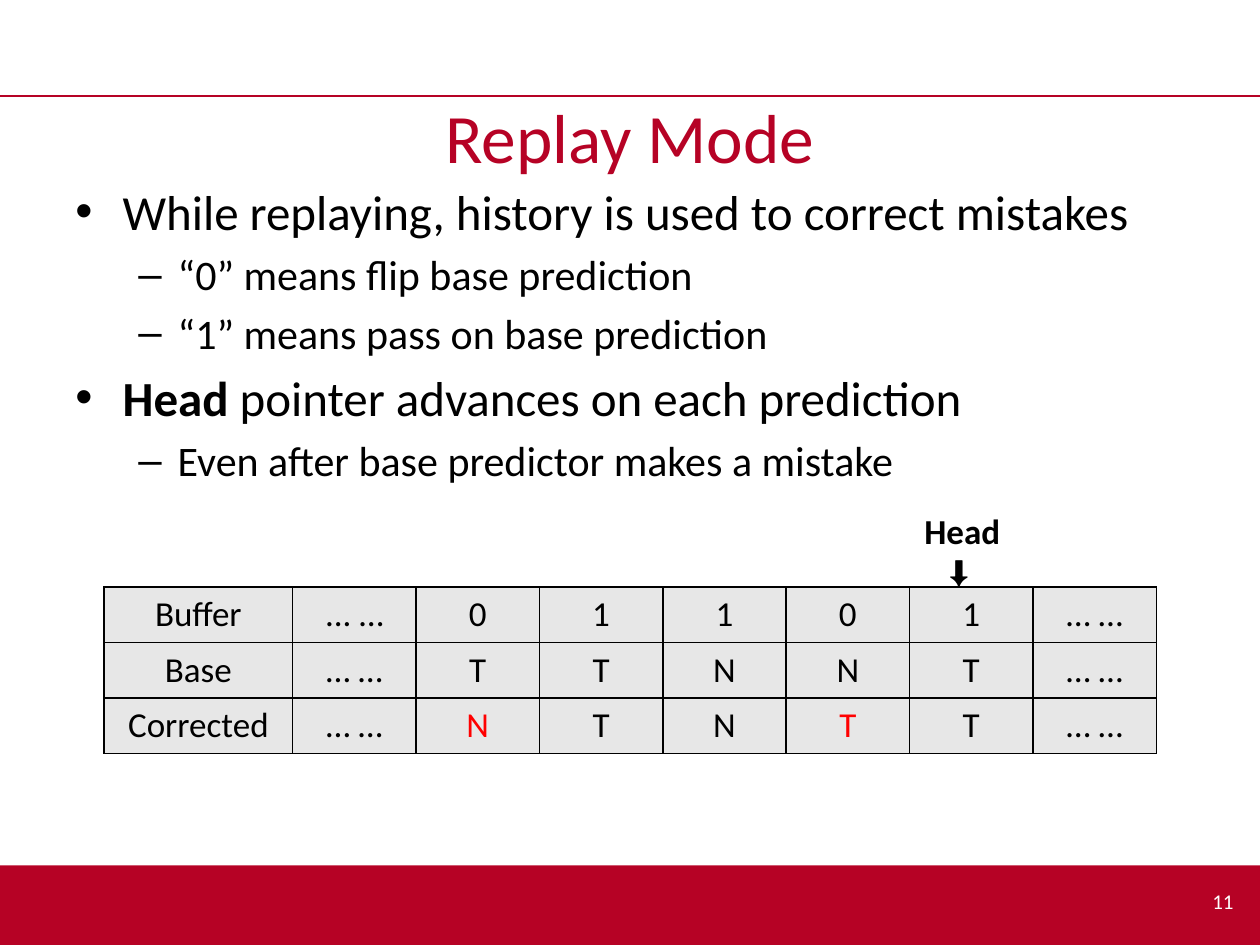
from lxml import etree
from pptx import Presentation
from pptx.dml.color import RGBColor
from pptx.enum.shapes import MSO_CONNECTOR, MSO_SHAPE
from pptx.enum.text import MSO_ANCHOR, PP_ALIGN
from pptx.oxml.ns import qn
from pptx.util import Pt

LEFT, CENTER, RIGHT = PP_ALIGN.LEFT, PP_ALIGN.CENTER, PP_ALIGN.RIGHT
TOP, MIDDLE = MSO_ANCHOR.TOP, MSO_ANCHOR.MIDDLE

# Content
TITLE = "Replay Mode"
BULLETS = [  # level, runs of (text, bold)
    (0, [("While replaying, history is used to correct mistakes", False)]),
    (1, [("“0” means flip base prediction", False)]),
    (1, [("“1” means pass on base prediction", False)]),
    (0, [("Head", True), (" pointer advances on each prediction", False)]),
    (1, [("Even after base predictor makes a mistake", False)]),
]
HISTORY = [
    ["Buffer", "... …", "0", "1", "1", "0", "1", "… …"],
    ["Base", "… …", "T", "T", "N", "N", "T", "… …"],
    ["Corrected", "… …", "N", "T", "N", "T", "T", "… …"],
]
CORRECTED_ROW = 2
PAGE_NUMBER = "11"

# Theme
THEME = {
    "font": "Calibri", "symbol_font": "Arial",
    "red": "B60225", "black": "000000", "white": "FFFFFF",
    "cell": "E7E7E7", "flipped": "FF0000",
    "title": 39.6, "table": 20, "arrow": 18, "number": 12,
}
LEVELS = [  # bullet character, text size, left margin, hanging indent
    ("•", 28, 27, 27),
    ("–", 24, 58.5, 22.5),
]

# Geometry in points
PAGE_WIDTH, PAGE_HEIGHT = 720, 540
RULE_TOP, BAND_HEIGHT = 54.7, 45.4
TABLE_LEFT, TABLE_TOP, ROW_HEIGHT = 59.5, 335.4, 31.7
LABEL_WIDTH, VALUE_WIDTH = 107.75, 70.5


def color(name):
    return RGBColor.from_string(THEME[name])


def add_span(para, text, size, ink="black", bold=False, font="font"):
    span = para.add_run()
    span.text = text
    span.font.name = THEME[font]
    span.font.size = Pt(size)
    span.font.bold = bold
    span.font.color.rgb = color(ink)


def add_box(page, left, top, width, height, anchor=TOP, wrap=True):
    box = page.shapes.add_textbox(Pt(left), Pt(top), Pt(width), Pt(height))
    frame = box.text_frame
    frame.word_wrap = wrap
    frame.vertical_anchor = anchor
    return frame


def add_label(page, place, text, size, align, anchor=TOP, wrap=True, **style):
    para = add_box(page, *place, anchor, wrap).paragraphs[0]
    para.alignment = align
    add_span(para, text, size, **style)


def add_frame_lines(page):
    band = page.shapes.add_shape(
        MSO_SHAPE.RECTANGLE, 0, Pt(PAGE_HEIGHT - BAND_HEIGHT), Pt(PAGE_WIDTH), Pt(BAND_HEIGHT))
    band.shadow.inherit = False
    band.fill.solid()
    band.fill.fore_color.rgb = color("red")
    band.line.fill.background()
    rule = page.shapes.add_connector(
        MSO_CONNECTOR.STRAIGHT, 0, Pt(RULE_TOP), Pt(PAGE_WIDTH), Pt(RULE_TOP))
    rule.line.color.rgb = color("red")
    rule.line.width = Pt(1)
    etree.SubElement(rule._element.spPr, qn("a:effectLst"))


def add_title(page):
    title = page.shapes.title
    title.left, title.top = 0, Pt(RULE_TOP)
    title.width, title.height = Pt(PAGE_WIDTH), Pt(45.4)
    title.text_frame.vertical_anchor = MIDDLE
    para = title.text_frame.paragraphs[0]
    para.alignment = CENTER
    add_span(para, TITLE, THEME["title"], "red")


def add_bullets(page):
    frame = add_box(page, 36, 100, 648, 391)
    for index, (level, runs) in enumerate(BULLETS):
        mark, size, margin, hanging = LEVELS[level]
        para = frame.add_paragraph() if index else frame.paragraphs[0]
        para.level = level
        if index:
            para.space_before = Pt(0.2 * size)
        props = para._p.get_or_add_pPr()
        props.set("marL", str(Pt(margin)))
        props.set("indent", str(-Pt(hanging)))
        etree.SubElement(props, qn("a:buFont"), typeface=THEME["symbol_font"])
        etree.SubElement(props, qn("a:buChar"), char=mark)
        for text, bold in runs:
            add_span(para, text, size, bold=bold)


def add_borders(cell):
    props = cell._tc.get_or_add_tcPr()
    for side in ("lnL", "lnR", "lnT", "lnB"):
        line = etree.SubElement(props, qn("a:" + side), w=str(Pt(1)))
        fill = etree.SubElement(line, qn("a:solidFill"))
        etree.SubElement(fill, qn("a:srgbClr"), val=THEME["black"])


def add_history(page):
    rows, columns = len(HISTORY), len(HISTORY[0])
    widths = [LABEL_WIDTH] + [VALUE_WIDTH] * (columns - 1)
    table = page.shapes.add_table(
        rows, columns, Pt(TABLE_LEFT), Pt(TABLE_TOP),
        Pt(sum(widths)), Pt(rows * ROW_HEIGHT)).table
    table.first_row = table.horz_banding = False
    for column, width in zip(table.columns, widths):
        column.width = Pt(width)
    for row_index, texts in enumerate(HISTORY):
        table.rows[row_index].height = Pt(ROW_HEIGHT)
        for column_index, text in enumerate(texts):
            cell = table.cell(row_index, column_index)
            add_borders(cell)
            cell.fill.solid()
            cell.fill.fore_color.rgb = color("cell")
            cell.vertical_anchor = MIDDLE
            para = cell.text_frame.paragraphs[0]
            para.alignment = CENTER
            # A zero in the buffer flips the base prediction
            flipped = row_index == CORRECTED_ROW and HISTORY[0][column_index] == "0"
            add_span(para, text, THEME["table"], "flipped" if flipped else "black")


def main():
    deck = Presentation()
    deck.slide_width, deck.slide_height = Pt(PAGE_WIDTH), Pt(PAGE_HEIGHT)
    page = deck.slides.add_slide(deck.slide_layouts[5])
    add_frame_lines(page)
    add_title(page)
    add_bullets(page)
    add_history(page)
    # Head pointer above the table
    add_label(page, (513.2, 287.4, 73.4, 31.5), "Head", THEME["table"], CENTER, bold=True)
    add_label(page, (535.5, 312, 31, 29), "⬇", THEME["arrow"], LEFT,
              wrap=False, font="symbol_font")
    # Page number in the band
    add_label(page, (516, 500.5, 196, 28.8), PAGE_NUMBER, THEME["number"], RIGHT,
              MIDDLE, ink="white")
    deck.save("out.pptx")


if __name__ == "__main__":
    main()
